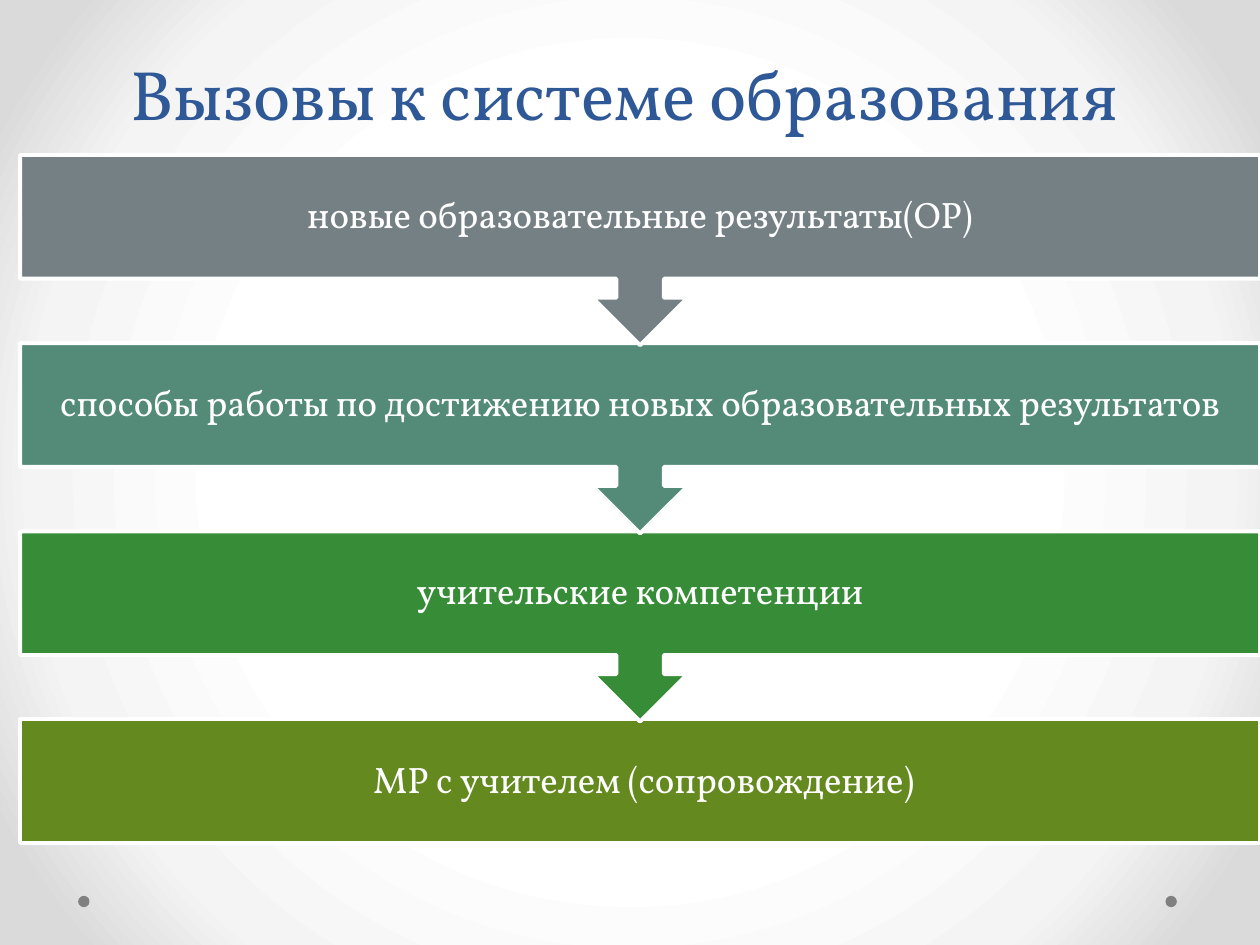
from dataclasses import dataclass

from pptx import Presentation
from pptx.dml.color import RGBColor
from pptx.enum.shapes import MSO_SHAPE
from pptx.enum.text import MSO_ANCHOR, MSO_AUTO_SIZE, PP_ALIGN
from pptx.oxml import parse_xml
from pptx.oxml.ns import nsdecls
from pptx.util import Inches, Pt

CENTER = PP_ALIGN.CENTER
MIDDLE, BOTTOM = MSO_ANCHOR.MIDDLE, MSO_ANCHOR.BOTTOM
NO_AUTOFIT = MSO_AUTO_SIZE.NONE
ELLIPSE, RECTANGLE = MSO_SHAPE.OVAL, MSO_SHAPE.RECTANGLE
CALLOUT = MSO_SHAPE.UP_ARROW_CALLOUT

STEP_LEFT, STEP_WIDTH = 0.16, 9.84
FIRST_TOP, LAST_TOP = 1.23, 5.71
BOX_HEIGHT, CALLOUT_HEIGHT = 0.98, 1.51


@dataclass(frozen=True)
class Theme:
    """Colours, font and type sizes of the slide."""

    font: str = "Vollkorn"
    title_size: int = 40
    title_spacing: int = 58
    step_size: int = 21
    line_width: float = 2.25
    title: str = "2F5897"
    white: str = "FFFFFF"
    dot: str = "808080"
    steps: tuple = ("758085", "538B78", "378D37", "63891F")
    background: tuple = ((50, "FFFFFF"), (76, "F4F4F4"), (92, "DADADA"))


class SlideBuilder:
    """Draws styled elements on the current slide."""

    def __init__(self, slide, theme):
        self.slide = slide
        self.theme = theme

    def background(self):
        """Fill the background with a circular gradient."""
        stops = "".join(
            f'<a:gs pos="{position * 1000}"><a:srgbClr val="{color}"/></a:gs>'
            for position, color in self.theme.background
        )
        background = parse_xml(
            f'<p:bg {nsdecls("p", "a")}><p:bgPr><a:gradFill rotWithShape="1">'
            f'<a:gsLst>{stops}</a:gsLst><a:path path="circle">'
            '<a:fillToRect l="50000" t="50000" r="50000" b="50000"/></a:path>'
            "</a:gradFill><a:effectLst/></p:bgPr></p:bg>"
        )
        self.slide.element.cSld.insert(0, background)

    def set_text(self, text_frame, text, size, color, anchor, spacing):
        """Set one centred paragraph and format its run."""
        text_frame.text = text
        text_frame.word_wrap = True
        text_frame.auto_size = NO_AUTOFIT
        text_frame.vertical_anchor = anchor
        paragraph = text_frame.paragraphs[0]
        paragraph.alignment = CENTER
        paragraph.line_spacing = spacing
        font = paragraph.runs[0].font
        font.name = self.theme.font
        font.size = Pt(size)
        font.color.rgb = RGBColor.from_string(color)

    def title(self, text, left, top, width, height):
        """Place and format the title placeholder."""
        title = self.slide.shapes.title
        title.left, title.top = Inches(left), Inches(top)
        title.width, title.height = Inches(width), Inches(height)
        theme = self.theme
        self.set_text(title.text_frame, text, theme.title_size, theme.title,
                      BOTTOM, Pt(theme.title_spacing))

    def shape(self, kind, left, top, width, height, fill, outlined=True):
        """Add a filled preset shape, outlined in white if wanted."""
        shape = self.slide.shapes.add_shape(
            kind, Inches(left), Inches(top), Inches(width), Inches(height))
        shape.shadow.inherit = False
        shape.fill.solid()
        shape.fill.fore_color.rgb = RGBColor.from_string(fill)
        if outlined:
            shape.line.color.rgb = RGBColor.from_string(self.theme.white)
            shape.line.width = Pt(self.theme.line_width)
        else:
            shape.line.fill.background()
        return shape

    def label(self, text, top):
        """Add the text of one step."""
        box = self.slide.shapes.add_textbox(
            Inches(STEP_LEFT), Inches(top), Inches(STEP_WIDTH), Inches(BOX_HEIGHT))
        frame = box.text_frame
        frame.margin_left = frame.margin_right = Inches(0.16)
        frame.margin_top = frame.margin_bottom = Inches(0.16)
        self.set_text(frame, text, self.theme.step_size, self.theme.white, MIDDLE, 0.9)

    def step(self, text, top, fill, is_last):
        """Add a step, with an arrow to the next one unless it is the last."""
        if is_last:
            self.shape(RECTANGLE, STEP_LEFT, top, STEP_WIDTH, BOX_HEIGHT, fill)
        else:
            callout = self.shape(
                CALLOUT, STEP_LEFT, top, STEP_WIDTH, CALLOUT_HEIGHT, fill)
            callout.rotation = 180
            for index, value in enumerate((0.25, 0.25, 0.25, 0.65)):
                callout.adjustments[index] = value
        self.label(text, top)


def main():
    """Build the slide and save it."""
    presentation = Presentation()
    presentation.slide_width, presentation.slide_height = Inches(10), Inches(7.5)
    theme = Theme()
    slide = presentation.slides.add_slide(presentation.slide_layouts[5])
    builder = SlideBuilder(slide, theme)

    builder.background()
    for left in (9.25, 0.62):
        builder.shape(ELLIPSE, left, 7.11, 0.09, 0.09, theme.dot, outlined=False)
    builder.title("Вызовы к системе образования ", 0.51, 0.13, 9, 0.99)

    steps = (
        "новые образовательные результаты(ОР)",
        "способы работы по достижению новых образовательных результатов",
        "учительские компетенции",
        " МР с учителем (сопровождение)",
    )
    last = len(steps) - 1
    pitch = (LAST_TOP - FIRST_TOP) / last
    for index in range(last, -1, -1):
        builder.step(steps[index], FIRST_TOP + index * pitch,
                     theme.steps[index], index == last)

    presentation.save("out.pptx")


if __name__ == "__main__":
    main()
